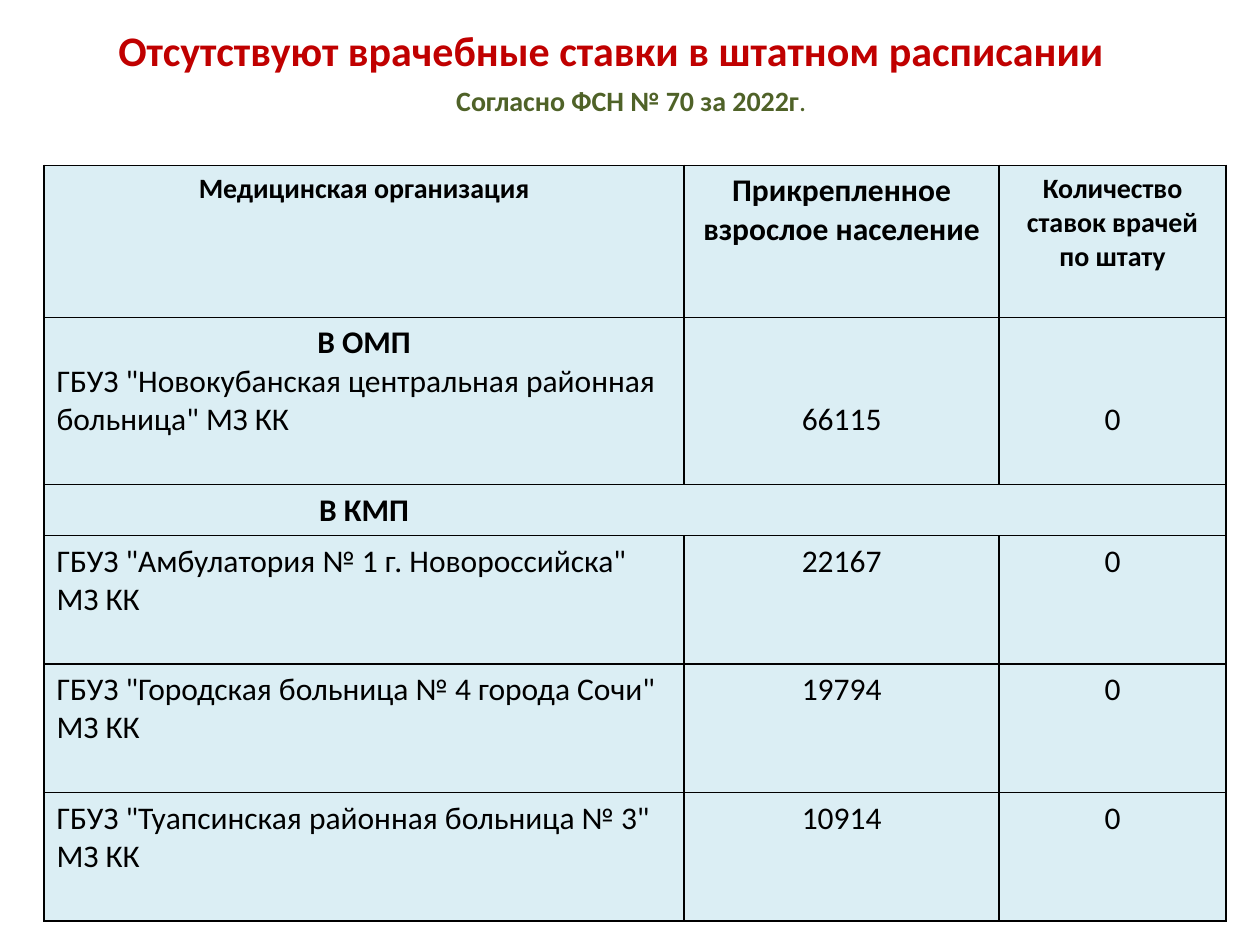
"""Build a slide with a table of medical organisations that have no physician posts."""
import pptx
import pptx.dml.color
import pptx.enum.text
import pptx.util
from lxml import etree

COLORS = {"title": "C00000", "subtitle": "4F6228", "text": "000000", "cell": "DBEEF4", "border": "000000"}
ALIGN = pptx.enum.text.PP_ALIGN
NAMESPACE = "{http://schemas.openxmlformats.org/drawingml/2006/main}"

deck = pptx.Presentation()
deck.slide_width = pptx.util.Inches(10)
deck.slide_height = pptx.util.Inches(7.5)
page = deck.slides.add_slide(deck.slide_layouts[6])
across = deck.slide_width / 100
down = deck.slide_height / 100


def style_paragraph(para, size, color, bold, align):
    para.alignment = align
    for span in para.runs:
        span.font.name = "Calibri"
        span.font.size = pptx.util.Pt(size)
        span.font.bold = bold
        span.font.color.rgb = pptx.dml.color.RGBColor.from_string(COLORS[color])


def add_border(cell, side, visible):
    properties = cell._tc.get_or_add_tcPr()
    line = etree.SubElement(properties, f"{NAMESPACE}ln{side}", w=str(pptx.util.Pt(1)))
    if visible:
        fill = etree.SubElement(line, f"{NAMESPACE}solidFill")
        etree.SubElement(fill, f"{NAMESPACE}srgbClr", val=COLORS["border"])
    else:
        etree.SubElement(line, f"{NAMESPACE}noFill")


headings = [
    ("Отсутствуют врачебные ставки в штатном расписании", 3.5, 1.7, 7.2, 24, "title"),
    ("Согласно ФСН № 70 за 2022г", 5.1, 8, 5.2, 16, "subtitle"),
]
for text, left, top, height, size, color in headings:
    box = page.shapes.add_textbox(
        int(left * across), int(top * down), int(90 * across), int(height * down))
    box.text_frame.word_wrap = True
    box.text_frame.vertical_anchor = pptx.enum.text.MSO_ANCHOR.MIDDLE
    para = box.text_frame.paragraphs[0]
    para.text = text
    if color == "subtitle":
        para.add_run().text = "."
    style_paragraph(para, size, color, True, ALIGN.CENTER)
    if color == "subtitle":
        para.runs[-1].font.bold = False

rows = [
    ("Медицинская организация", "Прикрепленное взрослое население", "Количество ставок врачей по штату"),
    ("В ОМП\nГБУЗ \"Новокубанская центральная районная больница\" МЗ КК", "66115", "0"),
    ("В КМП", "", ""),
    ("ГБУЗ \"Амбулатория № 1 г. Новороссийска\" МЗ КК", "22167", "0"),
    ("ГБУЗ \"Городская больница № 4 города Сочи\" МЗ КК", "19794", "0"),
    ("ГБУЗ \"Туапсинская районная больница № 3\" МЗ КК", "10914", "0"),
]
column_shares = [50.8, 25, 18]
row_shares = [16.1, 17.7, 5.4, 13.6, 13.6, 13.6]
header_sizes = [16, 18, 16]
section_row = 2
last_column = len(column_shares) - 1

table = page.shapes.add_table(
    len(rows), len(column_shares), int(3.5 * across), int(17.5 * down),
    int(sum(column_shares) * across), int(sum(row_shares) * down)).table
table.first_row = False
table.horz_banding = False
for column, share in zip(table.columns, column_shares):
    column.width = int(share * across)
for row, share in zip(table.rows, row_shares):
    row.height = int(share * down)

for row_index, texts in enumerate(rows):
    for column_index, text in enumerate(texts):
        cell = table.cell(row_index, column_index)
        cell.text_frame.text = text
        for para in cell.text_frame.paragraphs:
            bold = row_index == 0 or para.text.startswith("В ")
            centred = bold or column_index > 0
            size = header_sizes[column_index] if row_index == 0 else 18
            style_paragraph(para, size, "text", bold, ALIGN.CENTER if centred else ALIGN.LEFT)
        if row_index == 1 and column_index > 0:
            cell.margin_top = int(8.8 * down)
        divided = row_index != section_row
        add_border(cell, "L", divided or column_index == 0)
        add_border(cell, "R", divided or column_index == last_column)
        add_border(cell, "T", True)
        add_border(cell, "B", True)
        cell.fill.solid()
        cell.fill.fore_color.rgb = pptx.dml.color.RGBColor.from_string(COLORS["cell"])

deck.save("out.pptx")
